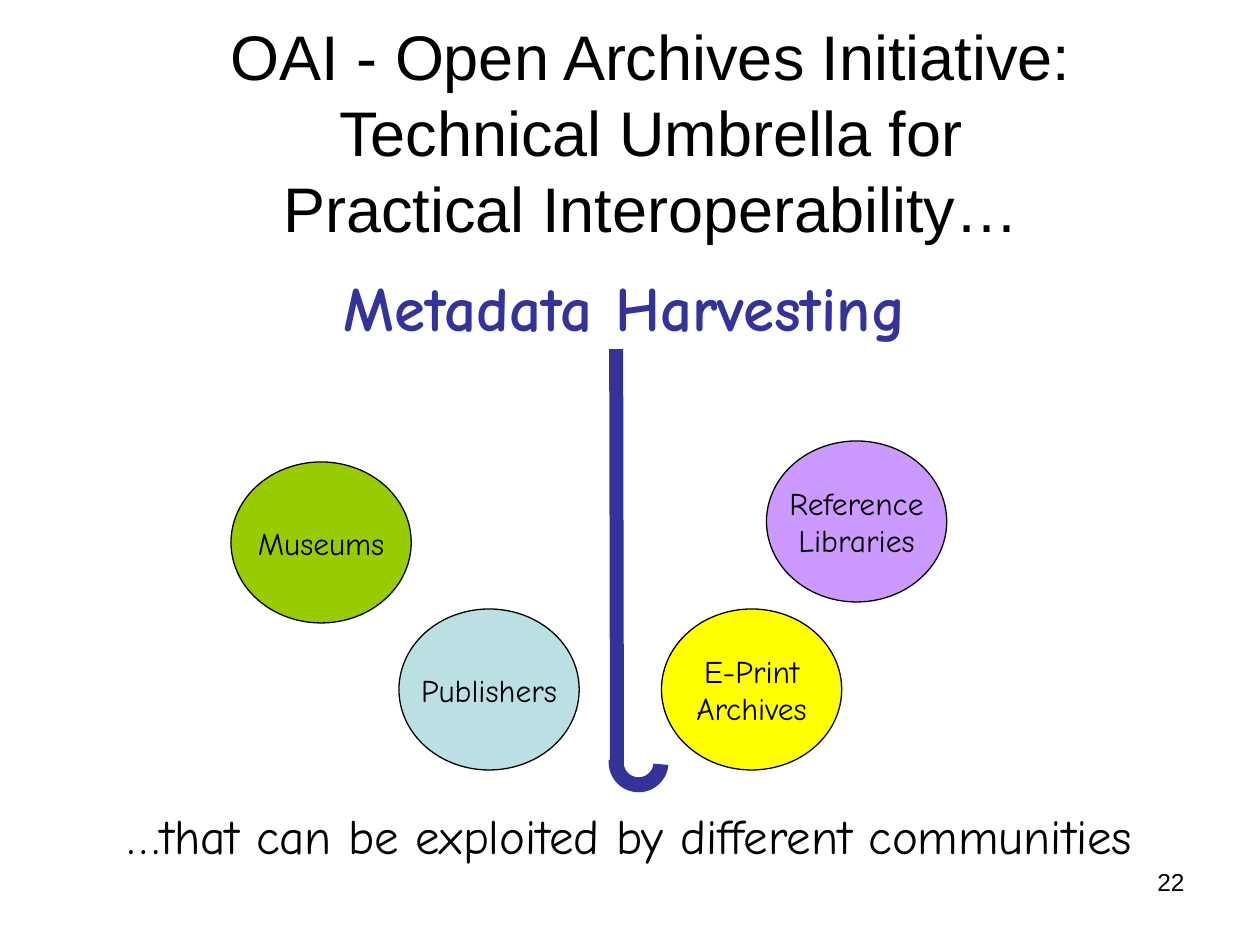
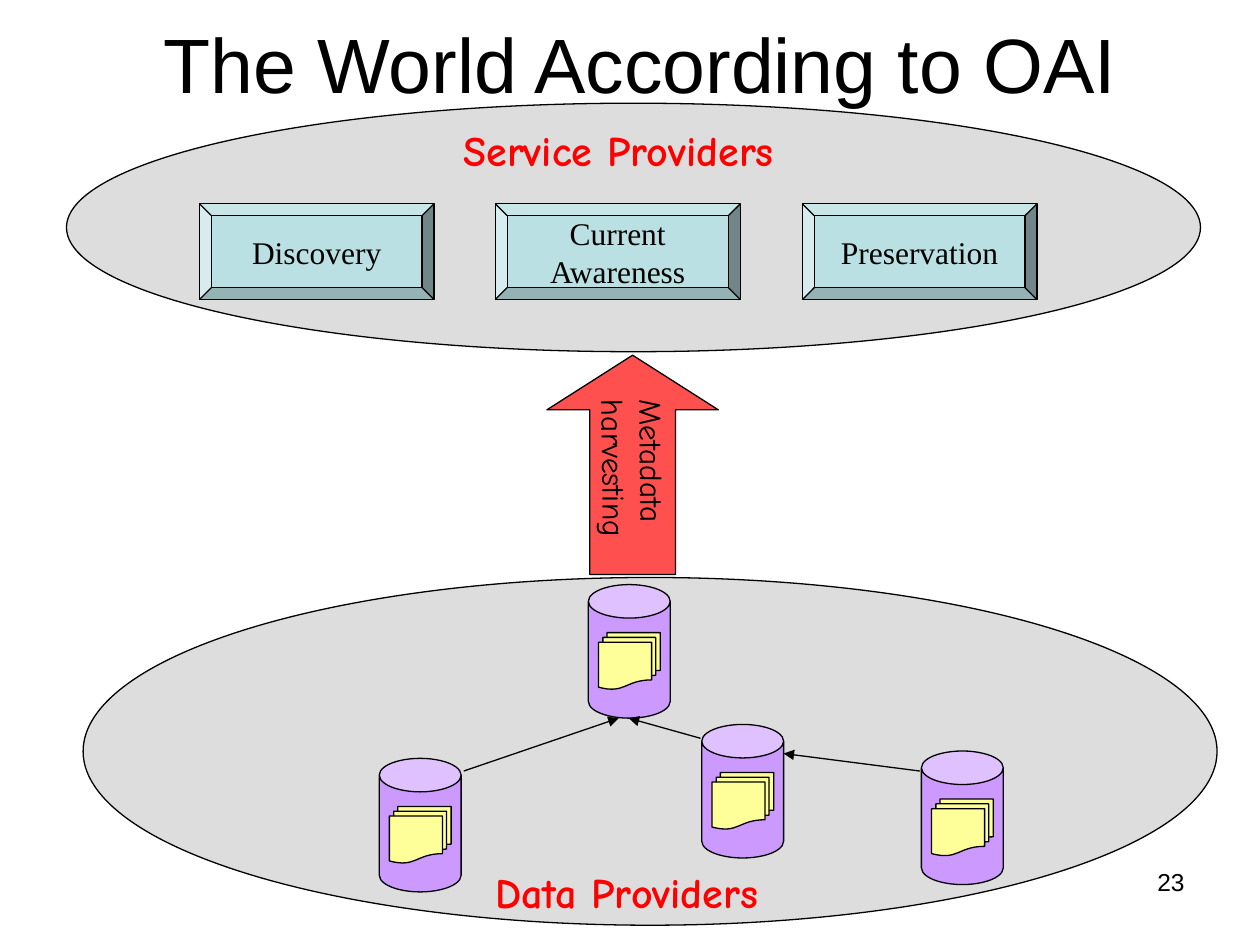
import pptx
import pptx.dml.color
import pptx.enum.shapes
import pptx.enum.text
import pptx.oxml
import pptx.util

Pt = pptx.util.Pt
color = pptx.dml.color.RGBColor.from_string
Preset = pptx.enum.shapes.MSO_SHAPE
Align = pptx.enum.text.PP_ALIGN
Anchor = pptx.enum.text.MSO_ANCHOR

BLACK, INDIGO, RED, GREY = "000000", "333399", "FF0000", "DDDDDD"
LILAC, AQUA, YELLOW, GREEN = "CC99FF", "BBE0E3", "FFFF00", "99CC00"
PAPER, CORAL = "FFFF99", "FF5050"
SANS, HAND, SERIF = "Arial", "Comic Neue", "Times New Roman"


def draw(slide, preset, box, fill, adjustments=()):
    """Add a filled preset shape with a thin black outline."""
    shape = slide.shapes.add_shape(preset, *map(Pt, box))
    shape.shadow.inherit = False
    shape.fill.solid()
    shape.fill.fore_color.rgb = color(fill)
    shape.line.color.rgb = color(BLACK)
    shape.line.width = Pt(0.75)
    for index, value in enumerate(adjustments):
        shape.adjustments[index] = value
    return shape


def write(shape, text, font, size, ink=BLACK, bold=False,
          align=Align.CENTER, anchor=Anchor.MIDDLE, wrap=False):
    frame = shape.text_frame
    frame.text = text
    frame.word_wrap = wrap
    frame.vertical_anchor = anchor
    for paragraph in frame.paragraphs:
        paragraph.alignment = align
        for run in paragraph.runs:
            run.font.name = font
            run.font.size = Pt(size)
            run.font.bold = bold
            run.font.color.rgb = color(ink)


deck = pptx.Presentation()
deck.slide_width, deck.slide_height = Pt(720), Pt(540)
umbrella, world = [deck.slides.add_slide(deck.slide_layouts[6]) for _ in range(2)]

# Umbrella: communities around the handle
for community, left, top, fill in [
    ("Reference\nLibraries", 438, 252, LILAC),
    ("Publishers", 228, 348, AQUA),
    ("E-Print\vArchives", 378, 348, YELLOW),
    ("Museums", 132, 264, GREEN),
]:
    circle = draw(umbrella, Preset.OVAL, (left, top, 103, 92), fill)
    write(circle, community, HAND, 18)

# Angle adjustments count 0.6 per degree: the crook runs from 5 to 185 degrees
crook = draw(umbrella, Preset.BLOCK_ARC, (347.8, 418.5, 34.2, 34.2), INDIGO,
             (5 * 0.6, 185 * 0.6, 0.25))
crook.line.fill.background()

harvesting = umbrella.shapes.add_textbox(Pt(36), Pt(150), Pt(642), Pt(282))
write(harvesting, "Metadata Harvesting", HAND, 36, INDIGO, True, anchor=Anchor.TOP)
conclusion = umbrella.shapes.add_textbox(Pt(18), Pt(432), Pt(684), Pt(90))
write(conclusion, "…that can be exploited by different communities", HAND, 28, wrap=True)

# World: providers, their services and their repositories
for box in [(47.5, 330, 648, 198.7), (38, 59, 648, 142)]:
    draw(world, Preset.OVAL, box, GREY)

for left, top in [(216.7, 433.4), (336.2, 334.1), (401, 414), (526.5, 429.2)]:
    draw(world, Preset.CAN, (left, top, 46.8, 76.3), LILAC, (0.409,))
    draw(world, Preset.FLOWCHART_MULTIDOCUMENT,
         (left + 5.8, top + 27.4, 35.3, 32.4), PAPER)

for service, left, width in [
    ("Discovery", 114, 134),
    ("Current\nAwareness", 283, 140),
    ("Preservation", 458.5, 134),
]:
    button = draw(world, Preset.BEVEL, (left, 116.5, width, 54.7), AQUA, (0.125,))
    write(button, service, SERIF, 18)

for providers, box in [
    ("Service Providers", (257.8, 67.7, 218.9, 35.3)),
    ("Data Providers", (275.8, 491.8, 187.9, 36)),
]:
    heading = world.shapes.add_textbox(*map(Pt, box))
    write(heading, providers, HAND, 24, RED, True, Align.LEFT, Anchor.TOP)

draw(world, Preset.UP_ARROW, (312.5, 203, 98, 125.3), CORAL, (0.5, 0.319))
flow = world.shapes.add_textbox(Pt(311), Pt(247), Pt(102), Pt(50.4))
flow.rotation = 89.3
write(flow, "Metadata\nharvesting", HAND, 18, align=Align.LEFT, anchor=Anchor.TOP)

# Umbrella handle and the links between repositories
for slide, ends, ink, width, arrow in [
    (umbrella, (352.1, 199.5, 352.6, 437.8), INDIGO, 8, False),
    (world, (265, 440.6, 353.5, 410.4), BLACK, 0.75, True),
    (world, (525.6, 440.6, 447.8, 430.6), BLACK, 0.75, True),
    (world, (400.3, 421.9, 359.3, 410.4), BLACK, 0.75, True),
]:
    link = slide.shapes.add_connector(
        pptx.enum.shapes.MSO_CONNECTOR.STRAIGHT, *map(Pt, ends))
    link.line.color.rgb = color(ink)
    link.line.width = Pt(width)
    if arrow:
        head = pptx.oxml.xmlchemy.OxmlElement("a:tailEnd")
        head.set("type", "triangle")
        link.line._get_or_add_ln().append(head)
    link._element.spPr.append(pptx.oxml.xmlchemy.OxmlElement("a:effectLst"))

# Titles and page numbers
for slide, title, box, size, page in [
    (umbrella, "OAI - Open Archives Initiative: Technical Umbrella for\v"
     "Practical Interoperability…", (48, 30, 648, 90), 36, "22"),
    (world, "The World According to OAI", (36, 0, 660, 71.3), 44, "23"),
]:
    heading = slide.shapes.add_textbox(*map(Pt, box))
    write(heading, title, SANS, size, wrap=True)
    number = slide.shapes.add_textbox(Pt(516), Pt(492), Pt(168), Pt(37.5))
    write(number, page, SANS, 14, align=Align.RIGHT, anchor=Anchor.TOP, wrap=True)

deck.save("out.pptx")
